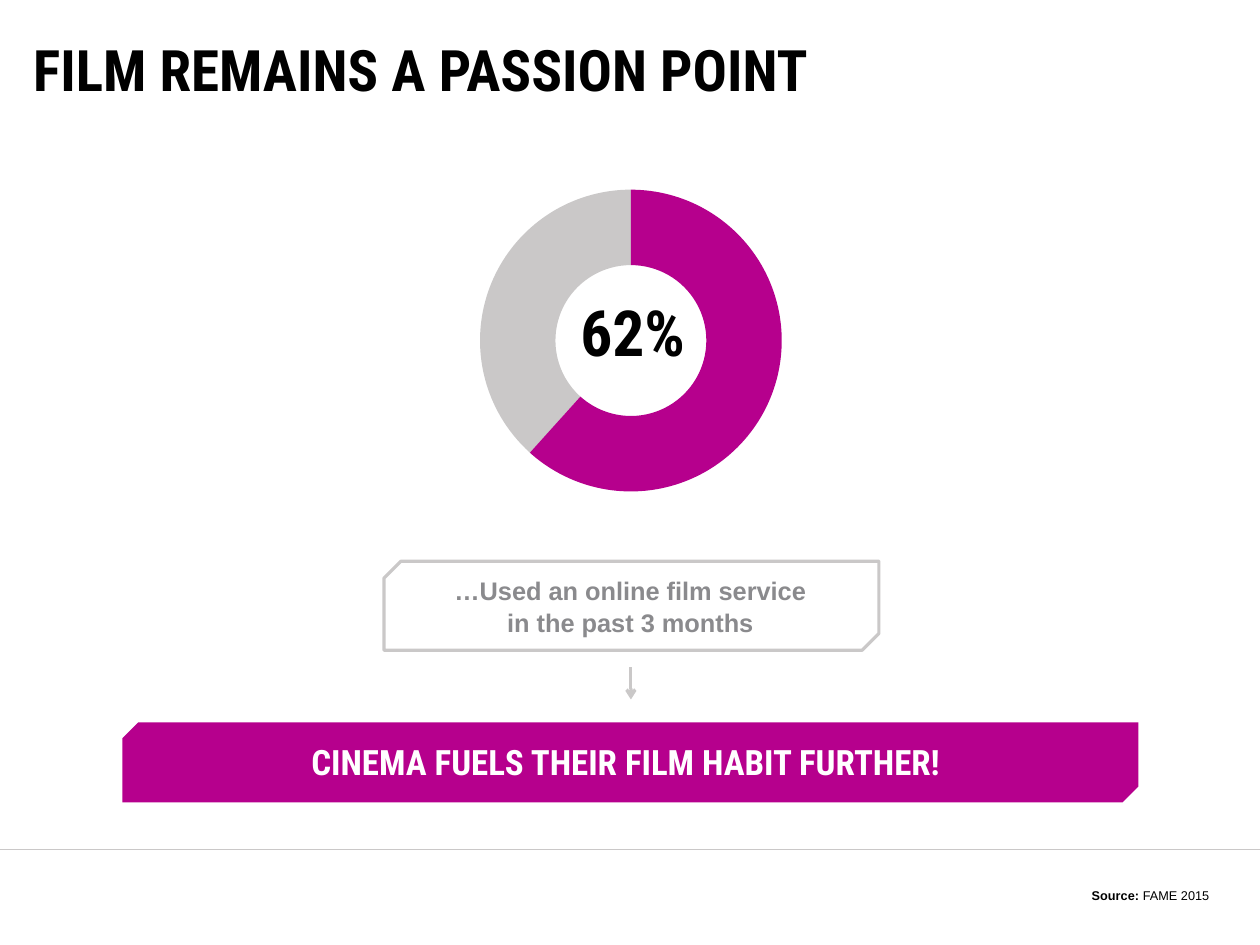
from lxml import etree
from pptx import Presentation
from pptx.dml.color import RGBColor
from pptx.enum.shapes import MSO_CONNECTOR, MSO_SHAPE
from pptx.enum.text import MSO_ANCHOR, PP_ALIGN
from pptx.oxml.ns import qn
from pptx.util import Inches, Pt

STRAIGHT = MSO_CONNECTOR.STRAIGHT
ARC, SNIPPED = MSO_SHAPE.BLOCK_ARC, MSO_SHAPE.SNIP_2_DIAG_RECTANGLE
LEFT, CENTER, RIGHT = PP_ALIGN.LEFT, PP_ALIGN.CENTER, PP_ALIGN.RIGHT
MIDDLE, BOTTOM = MSO_ANCHOR.MIDDLE, MSO_ANCHOR.BOTTOM

CM_PER_INCH = 2.54
SLIDE_W, SLIDE_H = 28 / CM_PER_INCH, 21 / CM_PER_INCH
MAGENTA, GREY, TEXT_GREY = "B6008D", "CAC8C8", "8A8A8D"
BLACK, WHITE = "000000", "FFFFFF"
HEADING, BODY = "Roboto Condensed", "Arial"


def rgb(value):
    return RGBColor.from_string(value)


def inches(box):
    return [Inches(length) for length in box]


def format_runs(paragraph, color, **font_values):
    for run in paragraph.runs:
        run.font.color.rgb = rgb(color)
        for key, value in font_values.items():
            setattr(run.font, key, value)


def write(shape, text, align, anchor, color, margins=(0.1, 0.05), **font_values):
    """Fill the shape with one formatted paragraph and return it."""
    frame = shape.text_frame
    across, down = inches(margins)
    frame_format = {
        "word_wrap": True, "vertical_anchor": anchor,
        "margin_left": across, "margin_right": across,
        "margin_top": down, "margin_bottom": down,
    }
    for key, value in frame_format.items():
        setattr(frame, key, value)
    paragraph = frame.paragraphs[0]
    paragraph.text = text
    paragraph.alignment = align
    format_runs(paragraph, color, **font_values)
    return paragraph


def add_label(slide, box, *text_values, **font_values):
    label = slide.shapes.add_textbox(*inches(box))
    return write(label, *text_values, **font_values)


def add_panel(slide, kind, box, adjustments, fill=None, line=None):
    panel = slide.shapes.add_shape(kind, *inches(box))
    panel.shadow.inherit = False
    for index, value in enumerate(adjustments):
        panel.adjustments[index] = value
    if fill:
        panel.fill.solid()
        panel.fill.fore_color.rgb = rgb(fill)
    else:
        panel.fill.background()
    if line:
        panel.line.color.rgb = rgb(line)
        panel.line.width = Pt(2)
    else:
        panel.line.fill.background()


def add_rule(slide, start, end, width, arrow=False):
    rule = slide.shapes.add_connector(STRAIGHT, *inches(start + end))
    rule.line.color.rgb = rgb(GREY)
    rule.line.width = Pt(width)
    if arrow:
        etree.SubElement(rule.line._get_or_add_ln(), qn("a:tailEnd"), type="arrow")
    etree.SubElement(rule._element.spPr, qn("a:effectLst"))


def add_title(slide, box):
    title = slide.shapes.title
    title.left, title.top, title.width, title.height = inches(box)
    write(title, "FILM REMAINS A PASSION POINT", LEFT, MIDDLE, BLACK,
          margins=(0, 0), name=HEADING, size=Pt(36), bold=True)


def add_share_ring(slide, box):
    """Draw the share clockwise from twelve o'clock, with its figure inside."""
    left, top, width, height = box
    top_angle, share_end = 270, 132
    arcs = [(share_end, top_angle, GREY), (top_angle, share_end, MAGENTA)]
    for start, end, color in arcs:
        # Angle adjustments count 0.6 per degree.
        add_panel(slide, ARC, box, (start * 0.6, end * 0.6, 0.25), fill=color)
    figure_box = (left + 0.63, top + 0.95, 1.41, 0.67)
    add_label(slide, figure_box, "62%", CENTER, BOTTOM, BLACK,
              name=HEADING, size=Pt(40), bold=True)


def add_statement(slide, box):
    left, top, width, height = box
    add_panel(slide, SNIPPED, box, (0.19, 0), line=GREY)
    paragraph = add_label(slide, (left + 0.26, top + 0.06, 3.79, 0.66),
                          "…Used an online film service\vin the past 3 months",
                          CENTER, MIDDLE, TEXT_GREY,
                          name=BODY, size=Pt(16), bold=True)
    paragraph.line_spacing = Pt(20)


def add_conclusion(slide, box):
    left, top, width, height = box
    add_panel(slide, SNIPPED, box, (0.2, 0), fill=MAGENTA)
    add_label(slide, (left + 0.27, top + 0.11, 8.34, 0.47),
              "CINEMA FUELS THEIR FILM HABIT FURTHER! ", CENTER, MIDDLE, WHITE,
              name=HEADING, size=Pt(22), bold=True)


def add_source(slide, box):
    paragraph = add_label(slide, box, "Source: ", RIGHT, BOTTOM, BLACK)
    paragraph.add_run().text = "FAME 2015"
    format_runs(paragraph, BLACK, name=BODY, size=Pt(8), bold=False)
    paragraph.runs[0].font.bold = True


def main():
    deck = Presentation()
    deck.slide_width, deck.slide_height = inches((SLIDE_W, SLIDE_H))
    slide = deck.slides.add_slide(deck.slide_layouts[5])
    center = 5.52
    add_rule(slide, (0, 7.43), (SLIDE_W, 7.43), 0.5)
    add_title(slide, (0.29, 0.38, 10.18, 0.45))
    add_share_ring(slide, (4.2, 1.66, 2.64, 2.64))
    add_statement(slide, (3.36, 4.91, 4.33, 0.78))
    add_rule(slide, (center, 5.84), (center, 6.12), 2, arrow=True)
    add_conclusion(slide, (1.07, 6.32, 8.89, 0.7))
    add_source(slide, (4.81, 7.71, 5.87, 0.24))
    deck.save("out.pptx")


if __name__ == "__main__":
    main()
